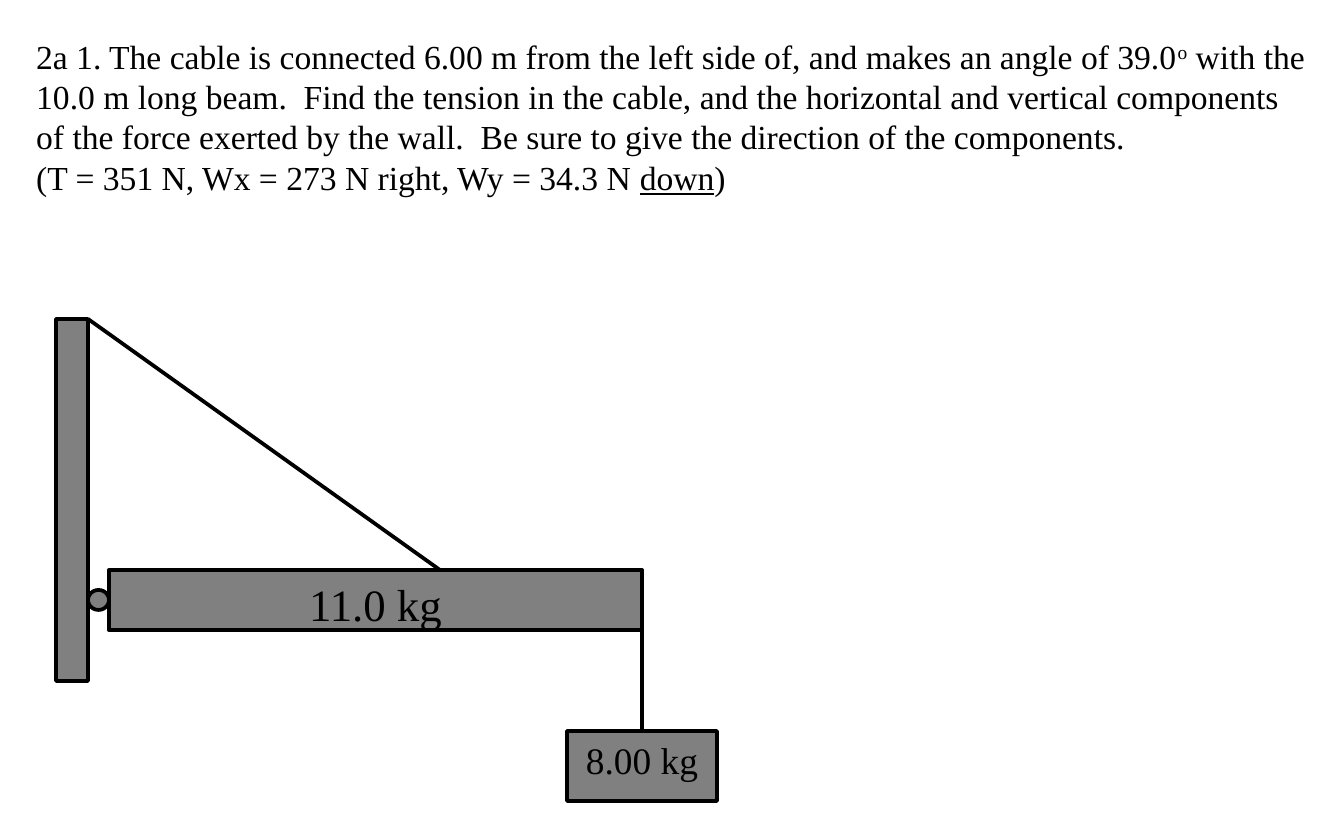
from lxml import etree
from pptx import Presentation
from pptx.dml.color import RGBColor
from pptx.enum.shapes import MSO_CONNECTOR, MSO_SHAPE
from pptx.enum.text import MSO_ANCHOR, MSO_AUTO_SIZE, PP_ALIGN
from pptx.oxml.ns import qn
from pptx.util import Emu, Pt

RECTANGLE = MSO_SHAPE.RECTANGLE
OVAL = MSO_SHAPE.OVAL
STRAIGHT = MSO_CONNECTOR.STRAIGHT
TOP = MSO_ANCHOR.TOP
CENTER = PP_ALIGN.CENTER
FIT_SHAPE = MSO_AUTO_SIZE.SHAPE_TO_FIT_TEXT

SLIDE_WIDTH, SLIDE_HEIGHT = 1344, 840
EMU_PER_PX = 9144000 / SLIDE_WIDTH
FONT = "Times New Roman"
COLORS = {"ink": "000000", "solid": "808080"}

WALL_LEFT, WALL_TOP, WALL_RIGHT, WALL_BOTTOM = 56, 319, 88, 681
BEAM_LEFT, BEAM_TOP, BEAM_RIGHT, BEAM_BOTTOM = 109, 570, 642, 630
CABLE_END = 440
LOAD_WIDTH, LOAD_HEIGHT, LOAD_TOP = 150, 70, 731
HINGE_HEIGHT = 20


def px(length):
    return Emu(round(length * EMU_PER_PX))


def color(name):
    return RGBColor.from_string(COLORS[name])


def add_span(para, text, size=18, underline=False, superscript=False):
    span = para.add_run()
    span.text = text
    span.font.name = FONT
    span.font.size = Pt(size)
    span.font.color.rgb = color("ink")
    if underline:
        span.font.underline = True
    if superscript:
        span._r.get_or_add_rPr().set("baseline", "30000")


def style_line(line):
    line.color.rgb = color("ink")
    line.width = Pt(2)


def add_problem(page, left, top, width, height):
    box = page.shapes.add_textbox(px(left), px(top), px(width), px(height))
    frame = box.text_frame
    frame.word_wrap = True
    frame.auto_size = FIT_SHAPE
    question = frame.paragraphs[0]
    add_span(question, "2a 1. The cable is connected 6.00 m from the left side of, "
                       "and makes an angle of 39.0")
    add_span(question, "o", superscript=True)
    add_span(question, " with the 10.0 m long beam.  Find the tension in the cable, "
                       "and the horizontal and vertical components of the force "
                       "exerted by the wall.  Be sure to give the direction of the "
                       "components.")
    answer = frame.add_paragraph()
    add_span(answer, "(T = 351 N, Wx = 273 N right, Wy = 34.3 N ")
    add_span(answer, "down", underline=True)
    add_span(answer, ")")


def add_body(diagram, kind, left, top, width, height, label=None, size=18):
    body = diagram.shapes.add_shape(kind, px(left), px(top), px(width), px(height))
    body.shadow.inherit = False
    body.fill.solid()
    body.fill.fore_color.rgb = color("solid")
    style_line(body.line)
    if label:
        frame = body.text_frame
        frame.vertical_anchor = TOP
        para = frame.paragraphs[0]
        para.alignment = CENTER
        add_span(para, label, size=size)


def add_rope(diagram, start_x, start_y, end_x, end_y):
    rope = diagram.shapes.add_connector(
        STRAIGHT, px(start_x), px(start_y), px(end_x), px(end_y))
    style_line(rope.line)
    etree.SubElement(rope._element.spPr, qn("a:effectLst"))


def add_diagram(page):
    diagram = page.shapes.add_group_shape()
    beam_height = BEAM_BOTTOM - BEAM_TOP
    hinge_top = BEAM_TOP + (beam_height - HINGE_HEIGHT) // 2
    add_body(diagram, RECTANGLE, WALL_LEFT, WALL_TOP,
             WALL_RIGHT - WALL_LEFT, WALL_BOTTOM - WALL_TOP)
    add_body(diagram, RECTANGLE, BEAM_LEFT, BEAM_TOP,
             BEAM_RIGHT - BEAM_LEFT, beam_height, label="11.0 kg", size=24)
    add_body(diagram, OVAL, WALL_RIGHT, hinge_top,
             BEAM_LEFT - WALL_RIGHT, HINGE_HEIGHT)
    add_rope(diagram, WALL_RIGHT, WALL_TOP, CABLE_END, BEAM_TOP)
    add_rope(diagram, BEAM_RIGHT, BEAM_BOTTOM, BEAM_RIGHT, LOAD_TOP)
    add_body(diagram, RECTANGLE, BEAM_RIGHT - LOAD_WIDTH // 2, LOAD_TOP,
             LOAD_WIDTH, LOAD_HEIGHT, label="8.00 kg", size=20)


def main():
    deck = Presentation()
    deck.slide_width = px(SLIDE_WIDTH)
    deck.slide_height = px(SLIDE_HEIGHT)
    page = deck.slides.add_slide(deck.slide_layouts[6])
    add_problem(page, 23, 29, 1300, 176)
    add_diagram(page)
    deck.save("out.pptx")


if __name__ == "__main__":
    main()
